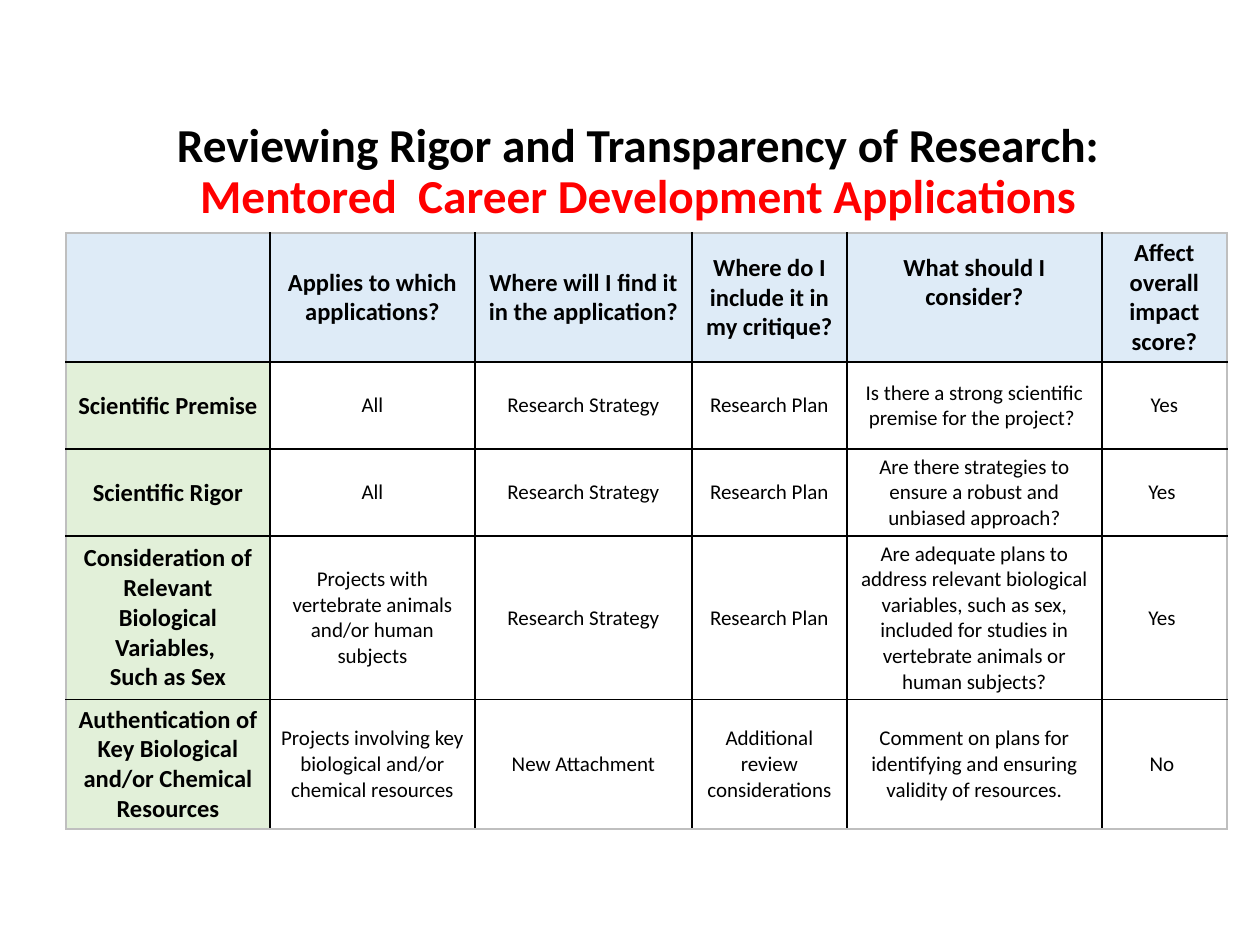
from lxml import etree
from pptx import Presentation
from pptx import util as u
from pptx.dml.color import RGBColor
from pptx.enum import text
from pptx.oxml import ns

PX = 914400 / 126
FONT = "Calibri"
BLACK, RED, GREY = "000000", "FF0000", "BFBFBF"
HEADER_FILL, LABEL_FILL = "DEEBF7", "E2F0D9"

COLUMNS = [204, 205, 217, 155, 255, 125]
ROWS = [129, 87, 87, 163, 129]
CELLS = [
    ["", "Applies to which applications?", "Where will I find it in the application?",
     "Where do I include it in my critique?", "What should I consider?",
     "Affect overall impact score?"],
    ["Scientific Premise", "All", "Research Strategy", "Research Plan",
     "Is there a strong scientific premise for the project? ", "Yes"],
    ["Scientific Rigor", "All", "Research Strategy", "Research Plan",
     "Are there strategies to ensure a robust and unbiased approach?", "Yes "],
    ["Consideration of Relevant Biological Variables, \nSuch as Sex",
     "Projects with vertebrate animals and/or human subjects",
     "Research Strategy", "Research Plan",
     "Are adequate plans to address relevant biological variables, such as sex, "
     "included for studies in vertebrate animals or human subjects?", "Yes "],
    ["Authentication of Key Biological and/or Chemical Resources",
     "Projects involving key biological and/or chemical resources",
     "New Attachment", "Additional review considerations",
     "Comment on plans for identifying and ensuring validity of resources.", "No "],
]


def px(n):
    return u.Emu(round(n * PX))


def color(value):
    return RGBColor.from_string(value)


def write(p, words, size=12, bold=False, fill=BLACK):
    p.alignment = text.PP_ALIGN.CENTER
    r = p.add_run()
    r.text = words
    r.font.name = FONT
    r.font.size = u.Pt(size)
    r.font.bold = bold
    r.font.color.rgb = color(fill)


def add_title(s):
    sp = s.shapes.title
    sp.left, sp.top, sp.width, sp.height = px(59), px(132), px(1158), px(138)
    tf = sp.text_frame
    tf.word_wrap = True
    tf.auto_size = text.MSO_AUTO_SIZE.NONE
    tf.vertical_anchor = text.MSO_ANCHOR.MIDDLE
    tf.margin_top, tf.margin_bottom = px(6), px(62)
    p = tf.paragraphs[0]
    p.line_spacing = 0.9
    write(p, "Reviewing Rigor and Transparency of Research:", size=27, bold=True)
    p.add_line_break()
    write(p, "Mentored  Career Development Applications", size=27, bold=True, fill=RED)


def add_borders(cell, row, col):
    """Draw black inner rules and a grey outer frame."""
    outer = {"lnL": col == 0, "lnR": col == len(COLUMNS) - 1,
             "lnT": row == 0, "lnB": row == len(ROWS) - 1}
    tc_pr = cell._tc.get_or_add_tcPr()
    for side, is_outer in outer.items():
        ln = etree.SubElement(tc_pr, ns.qn(f"a:{side}"), w=str(u.Pt(1)))
        solid = etree.SubElement(ln, ns.qn("a:solidFill"))
        etree.SubElement(solid, ns.qn("a:srgbClr"), val=GREY if is_outer else BLACK)


def format_cell(cell, row, col):
    is_heading = row == 0 or col == 0
    add_borders(cell, row, col)
    if is_heading:
        cell.fill.solid()
        cell.fill.fore_color.rgb = color(LABEL_FILL if row else HEADER_FILL)
    else:
        cell.fill.background()
    cell.vertical_anchor = text.MSO_ANCHOR.MIDDLE
    cell.margin_left = cell.margin_right = px(9)
    cell.margin_top = px(5)
    # The "What should I consider?" heading sits one half line higher.
    cell.margin_bottom = px(35 if (row, col) == (0, 4) else 5)
    tf = cell.text_frame
    for i, words in enumerate(CELLS[row][col].split("\n")):
        p = tf.add_paragraph() if i else tf.paragraphs[0]
        if words:
            write(p, words, size=14 if is_heading else 12, bold=is_heading)


def add_review_table(s):
    frame = s.shapes.add_table(len(ROWS), len(COLUMNS), px(66), px(233),
                               px(sum(COLUMNS)), px(sum(ROWS)))
    table = frame.table
    table.first_row = table.horz_banding = False
    for column, width in zip(table.columns, COLUMNS):
        column.width = px(width)
    for row, height in enumerate(ROWS):
        table.rows[row].height = px(height)
        for col in range(len(COLUMNS)):
            format_cell(table.cell(row, col), row, col)


def main():
    prs = Presentation()
    prs.slide_width, prs.slide_height = px(1260), px(945)
    s = prs.slides.add_slide(prs.slide_layouts[5])
    add_title(s)
    add_review_table(s)
    prs.save("out.pptx")


if __name__ == "__main__":
    main()
